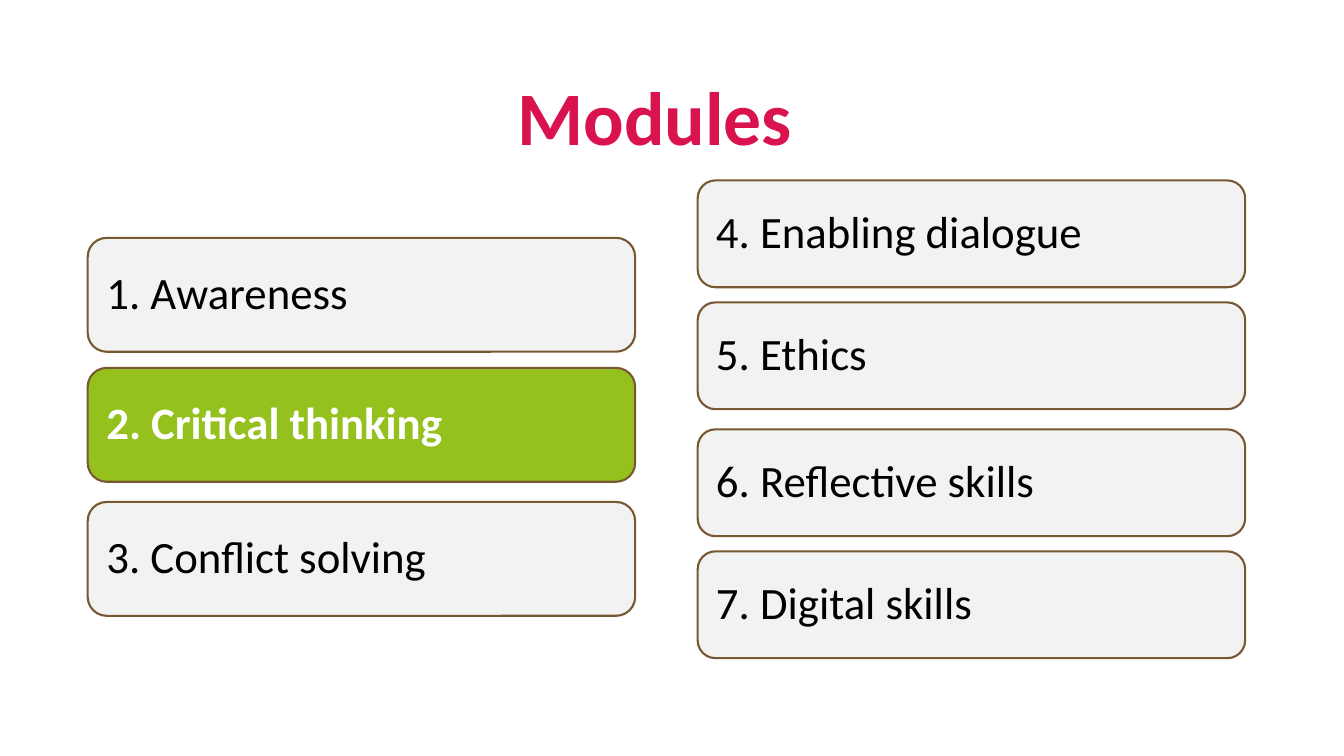
from pptx import Presentation
from pptx.dml.color import RGBColor
from pptx.enum import shapes, text
from pptx.util import Inches, Pt

COLORS = {
    "title": "D8134D",
    "card": "F2F2F2",
    "active": "95C11F",
    "border": "785832",
    "text": "000000",
    "active_text": "FFFFFF",
}
ACTIVE_MODULE = "2. Critical thinking"
CARD_WIDTH = 5.43


def color(name):
    return RGBColor.from_string(COLORS[name])


def write(tf, content, color_name, align, **font):
    """Fill a text frame with one formatted line."""
    tf.word_wrap = True
    p = tf.paragraphs[0]
    p.alignment = align
    p.line_spacing = 0.9
    r = p.add_run()
    r.text = content
    for name, value in {"name": "Calibri", **font}.items():
        setattr(r.font, name, value)
    r.font.color.rgb = color(color_name)


def add_title(s, left, top, width, height):
    box = s.shapes.add_textbox(*map(Inches, (left, top, width, height)))
    tf = box.text_frame
    tf.vertical_anchor = text.MSO_ANCHOR.BOTTOM
    write(tf, "Modules", "title", text.PP_ALIGN.CENTER, size=Pt(54), bold=True)


def add_card(s, label, left, top, width, height):
    active = label == ACTIVE_MODULE
    sp = s.shapes.add_shape(shapes.MSO_SHAPE.ROUNDED_RECTANGLE,
                            *map(Inches, (left, top, width, height)))
    sp.shadow.inherit = False
    sp.fill.solid()
    sp.fill.fore_color.rgb = color("active" if active else "card")
    sp.line.color.rgb = color("border")
    sp.line.width = Pt(1.5)
    tf = sp.text_frame
    tf.vertical_anchor = text.MSO_ANCHOR.MIDDLE
    for side in ("left", "top", "right", "bottom"):
        setattr(tf, f"margin_{side}", Inches(0.13))
    write(tf, label, "active_text" if active else "text", text.PP_ALIGN.LEFT,
          size=Pt(32), bold=active)


def add_column(s, left, card_height, modules):
    """Place a column of cards, given as (top, label) pairs."""
    for top, label in modules:
        add_card(s, label, left, top, CARD_WIDTH, card_height)


def main():
    prs = Presentation()
    prs.slide_width, prs.slide_height = Inches(13.33), Inches(7.5)
    s = prs.slides.add_slide(prs.slide_layouts[6])
    add_title(s, 0.01, -0.3, 12.97, 1.95)
    add_column(s, 0.87, 1.13, [
        (2.36, "1. Awareness"),
        (3.65, ACTIVE_MODULE),
        (4.98, "3. Conflict solving"),
    ])
    add_column(s, 6.92, 1.06, [
        (1.79, "4. Enabling dialogue"),
        (3.0, "5. Ethics"),
        (4.26, "6. Reflective skills"),
        (5.47, "7. Digital skills"),
    ])
    prs.save("out.pptx")


if __name__ == "__main__":
    main()
